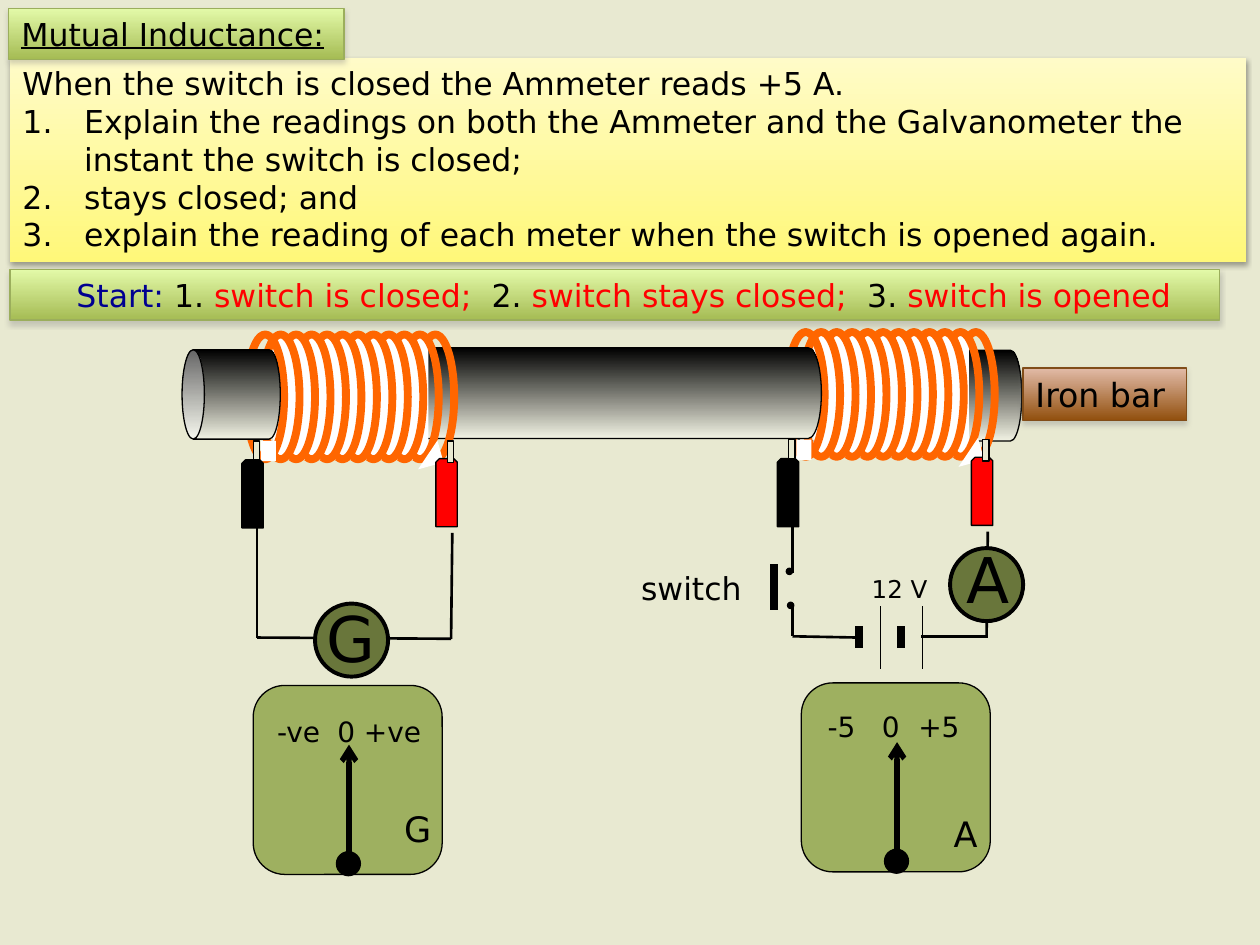
"""Build the mutual inductance slide with two coils, their circuits and meters."""
from dataclasses import dataclass
from typing import NamedTuple, Optional

from lxml.etree import SubElement
from pptx import Presentation
from pptx.dml.color import RGBColor
from pptx.enum.shapes import MSO_CONNECTOR, MSO_SHAPE
from pptx.enum.text import MSO_ANCHOR, MSO_AUTO_SIZE, PP_ALIGN
from pptx.oxml.ns import qn
from pptx.util import Inches, Pt

FONT = "DejaVu Sans"
BLACK = RGBColor(0x00, 0x00, 0x00)
WHITE = RGBColor(0xFF, 0xFF, 0xFF)
RED = RGBColor(0xFF, 0x00, 0x00)
NAVY = RGBColor(0x00, 0x00, 0x90)
COPPER = RGBColor(0xFF, 0x66, 0x00)
CREAM = RGBColor(0xE8, 0xE9, 0xD1)
DIAL_GREEN = RGBColor(0x9E, 0xB0, 0x60)
BADGE_GREEN = RGBColor(0x69, 0x76, 0x3B)
GREEN_EDGE = RGBColor(0x9B, 0xAE, 0x5C)
BROWN_EDGE = RGBColor(0x81, 0x4D, 0x19)
GREEN_BLEND = (RGBColor(0xE3, 0xF9, 0xA8), RGBColor(0xA5, 0xBC, 0x54))
BROWN_BLEND = (RGBColor(0xE2, 0xBB, 0xA8), RGBColor(0x91, 0x4F, 0x0D))
YELLOW_BLEND = (RGBColor(0xFF, 0xFB, 0xC8), RGBColor(0xFF, 0xF8, 0x79))
IRON_BLEND = (RGBColor(0xF1, 0xF2, 0xE3), BLACK)

TURNS = 12
TURN_STEP = 1.35 / (TURNS - 1)


class Box(NamedTuple):
    left: float
    top: float
    width: float
    height: float


class Wire(NamedTuple):
    x1: float
    y1: float
    x2: float
    y2: float
    weight: float = 1.5


class Label(NamedTuple):
    text: str
    box: Box
    size: float
    tabs: tuple = ()


@dataclass(frozen=True)
class Meter:
    dial_left: float
    dial_top: float
    badge: Box
    symbol: Label
    letter: Label
    scale: Label


METERS = (
    Meter(2.01, 5.44, Box(2.5, 4.79, 0.58, 0.58),
          Label("G", Box(2.49, 4.71, 0.59, 0.71), 36),
          Label("G", Box(3.11, 6.36, 0.53, 0.44), 20),
          Label("-ve\t0\t+ve", Box(2.1, 5.62, 1.72, 0.37), 16, (0.48, 0.69))),
    Meter(6.36, 5.42, Box(7.54, 4.35, 0.58, 0.58),
          Label("A", Box(7.57, 4.24, 0.55, 0.71), 36),
          Label("A", Box(7.47, 6.4, 0.5, 0.44), 20),
          Label("-5\t0\t+5", Box(6.47, 5.58, 1.64, 0.37), 16, (0.43, 0.72))),
)
BATTERY = (Wire(7.15, 4.97, 7.15, 5.14, 4.5), Wire(7.32, 4.81, 7.32, 5.31, 0.75),
           Wire(6.82, 4.97, 6.82, 5.14, 4.5), Wire(6.99, 4.81, 6.99, 5.31, 0.75))
SUPPLY_WIRES = (Wire(6.81, 5.06, 6.29, 5.05), Wire(6.29, 4.8, 6.29, 5.05),
                Wire(7.84, 4.22, 7.83, 5.06), Wire(7.84, 5.05, 7.31, 5.05),
                Wire(6.29, 4.15, 6.29, 4.55), Wire(6.14, 4.48, 6.14, 4.84, 4.5))
GALVANOMETER_WIRES = (Wire(3.58, 5.07, 2.04, 5.06), Wire(3.59, 4.23, 3.58, 5.07),
                      Wire(2.04, 4.16, 2.04, 5.06))
QUESTIONS = (
    "Explain the readings on both the Ammeter and the Galvanometer the "
    "instant the switch is closed;",
    "stays closed; and",
    "explain the reading of each meter when the switch is opened again.",
)
START_RUNS = (("Start: ", NAVY), ("1.", BLACK), (" switch is closed;  ", RED),
              ("2.", BLACK), (" switch stays closed;  ", RED),
              ("3.", BLACK), (" switch is opened", RED))


def add_run(paragraph, text: str, size: float, color: RGBColor = BLACK):
    run = paragraph.add_run()
    run.text = text
    run.font.name, run.font.size = FONT, Pt(size)
    run.font.color.rgb = color
    return run


def blend(shape, colors: tuple, angle: float) -> None:
    shape.fill.gradient()
    shape.fill.gradient_angle = angle
    for stop, color in zip(shape.fill.gradient_stops, colors):
        stop.color.rgb = color


def outline(shape, color: Optional[RGBColor], weight: float) -> None:
    if color is None:
        shape.line.fill.background()
    else:
        shape.line.color.rgb = color
        shape.line.width = Pt(weight)


def add_part(slide, preset, box: Box, fill: Optional[RGBColor] = None,
             edge: Optional[RGBColor] = None, weight: float = 0.75, rotation: float = 0):
    part = slide.shapes.add_shape(preset, *map(Inches, box))
    part.shadow.inherit = False
    part.rotation = rotation
    if fill is None:
        part.fill.background()
    else:
        part.fill.solid()
        part.fill.fore_color.rgb = fill
    outline(part, edge, weight)
    return part


def add_wire(slide, wire: Wire):
    line = slide.shapes.add_connector(MSO_CONNECTOR.STRAIGHT, *map(Inches, wire[:4]))
    outline(line, BLACK, wire.weight)
    SubElement(line._element.spPr, qn("a:effectLst"))
    return line


def add_label(slide, label: Label) -> None:
    frame = slide.shapes.add_textbox(*map(Inches, label.box)).text_frame
    frame.word_wrap = True
    paragraph = frame.paragraphs[0]
    add_run(paragraph, label.text, label.size)
    if label.tabs:
        stops = SubElement(paragraph._p.get_or_add_pPr(), qn("a:tabLst"))
        for position in label.tabs:
            SubElement(stops, qn("a:tab"), pos=str(Inches(position)), algn="l")


def style_panel(panel, colors: tuple, edge: Optional[RGBColor], shade: str, wrap: bool):
    blend(panel, colors, 270)
    outline(panel, edge, 0.75)
    panel.shadow.inherit = False
    effects = panel._element.spPr.find(qn("a:effectLst"))
    shadow = SubElement(effects, qn("a:outerShdw"), blurRad="40000", dist="23000",
                        dir="5400000", rotWithShape="0")
    tone = SubElement(shadow, qn("a:srgbClr"), val=shade)
    SubElement(tone, qn("a:alpha"), val="35000")
    frame = panel.text_frame
    frame.word_wrap = wrap
    frame.auto_size = MSO_AUTO_SIZE.NONE
    frame.vertical_anchor = MSO_ANCHOR.TOP
    frame.paragraphs[0].alignment = PP_ALIGN.LEFT
    return frame


def add_panel(slide, box: Box, colors: tuple, edge: Optional[RGBColor],
              shade: str = "808080", wrap: bool = True):
    panel = slide.shapes.add_shape(MSO_SHAPE.RECTANGLE, *map(Inches, box))
    return style_panel(panel, colors, edge, shade, wrap)


def add_iron(slide, box: Box, bevel: float = 0.25) -> None:
    iron = add_part(slide, MSO_SHAPE.CAN, box, edge=BLACK, rotation=270)
    iron.adjustments[0] = bevel
    blend(iron, IRON_BLEND, 0)


def add_coil(slide, left: float, top: float) -> None:
    for turn in range(TURNS):
        x = left - turn * TURN_STEP
        add_part(slide, MSO_SHAPE.OVAL, Box(x, top, 0.99, 0.3), None, COPPER, 4.5, 270)
        if turn < TURNS - 2:
            add_part(slide, MSO_SHAPE.RECTANGLE, Box(x - 0.12, top + 0.09, 0.99, 0.13),
                     WHITE, rotation=270)
    corner = add_part(slide, MSO_SHAPE.RIGHT_TRIANGLE,
                      Box(left + 0.33, top + 0.52, 0.21, 0.18), WHITE, rotation=164.5)
    corner._element.spPr.xfrm.set("flipV", "1")


def add_leads(slide, left: float, top: float) -> None:
    add_part(slide, MSO_SHAPE.RECTANGLE, Box(left + 0.15, top - 0.15, 0.12, 0.16), WHITE)
    for x, y, color, tip in ((left + 1.54, top - 0.01, RED, Box(left + 1.57, top - 0.09, 0.17, 0.05)),
                             (left, top, BLACK, Box(left + 0.04, top - 0.1, 0.15, 0.05))):
        add_part(slide, MSO_SHAPE.SNIP_2_SAME_RECTANGLE, Box(x, y, 0.17, 0.54), color, BLACK)
        add_part(slide, MSO_SHAPE.RECTANGLE, tip, CREAM, BLACK, rotation=270)


def add_meter(slide, meter: Meter) -> None:
    x, y = meter.dial_left, meter.dial_top
    add_part(slide, MSO_SHAPE.OVAL, meter.badge, BADGE_GREEN, BLACK, 2.25)
    add_part(slide, MSO_SHAPE.ROUNDED_RECTANGLE, Box(x, y, 1.5, 1.5), DIAL_GREEN, BLACK)
    needle = add_wire(slide, Wire(x + 0.76, y + 1.42, x + 0.76, y + 0.47, 3))
    SubElement(needle.line._get_or_add_ln(), qn("a:tailEnd"), type="arrow")
    add_part(slide, MSO_SHAPE.OVAL, Box(x + 0.66, y + 1.32, 0.19, 0.19), BLACK, BLACK)
    for label in (meter.symbol, meter.letter, meter.scale):
        add_label(slide, label)


def add_questions(slide) -> None:
    frame = add_panel(slide, Box(0.08, 0.46, 9.81, 1.62), YELLOW_BLEND, None, "000000")
    add_run(frame.paragraphs[0], "When the switch is closed the Ammeter reads +5 A.", 18)
    for question in QUESTIONS:
        paragraph = frame.add_paragraph()
        paragraph.alignment = PP_ALIGN.LEFT
        add_run(paragraph, question, 18)
        properties = paragraph._p.get_or_add_pPr()
        properties.set("marL", str(Inches(0.49)))
        properties.set("indent", str(Inches(-0.49)))
        SubElement(properties, qn("a:buAutoNum"), type="arabicPeriod")


def add_title(slide) -> None:
    title = slide.shapes.title
    title.left, title.top, title.width, title.height = map(Inches, (0.07, 0.07, 2.66, 0.4))
    frame = style_panel(title, GREEN_BLEND, GREEN_EDGE, "808080", False)
    add_run(frame.paragraphs[0], "Mutual Inductance:", 18).font.underline = True
    slide.shapes._spTree.append(title._element)


def main() -> None:
    deck = Presentation()
    deck.slide_width, deck.slide_height = Inches(10), Inches(7.5)
    slide = deck.slides.add_slide(deck.slide_layouts[5])
    slide.background.fill.solid()
    slide.background.fill.fore_color.rgb = CREAM

    add_questions(slide)
    add_iron(slide, Box(6.81, 2.2, 0.72, 1.88))
    add_coil(slide, 7.25, 2.98)
    add_leads(slide, 6.17, 3.64)
    for wire in BATTERY + SUPPLY_WIRES:
        add_wire(slide, wire)
    for x, y in ((6.24, 4.51), (6.25, 4.78)):
        add_part(slide, MSO_SHAPE.OVAL, Box(x, y, 0.05, 0.05), BLACK, BLACK)
    add_iron(slide, Box(4.03, 0.99, 0.72, 4.26), 0.29)
    add_coil(slide, 2.96, 3)
    add_iron(slide, Box(1.48, 2.74, 0.71, 0.78))
    add_leads(slide, 1.92, 3.65)
    for wire in GALVANOMETER_WIRES:
        add_wire(slide, wire)
    for meter in METERS:
        add_meter(slide, meter)
    add_label(slide, Label("12 V", Box(6.82, 4.51, 0.68, 0.34), 14))
    add_label(slide, Label("switch", Box(4.99, 4.47, 1.13, 0.4), 18))

    start = add_panel(slide, Box(0.08, 2.14, 9.6, 0.4), GREEN_BLEND, GREEN_EDGE)
    start.margin_left = Inches(0.24)
    start.paragraphs[0].alignment = PP_ALIGN.CENTER
    for text, color in START_RUNS:
        add_run(start.paragraphs[0], text, 18, color)
    add_title(slide)
    iron_bar = add_panel(slide, Box(8.12, 2.92, 1.3, 0.42), BROWN_BLEND, BROWN_EDGE, wrap=False)
    add_run(iron_bar.paragraphs[0], "Iron bar", 19)
    deck.save("out.pptx")


if __name__ == "__main__":
    main()
